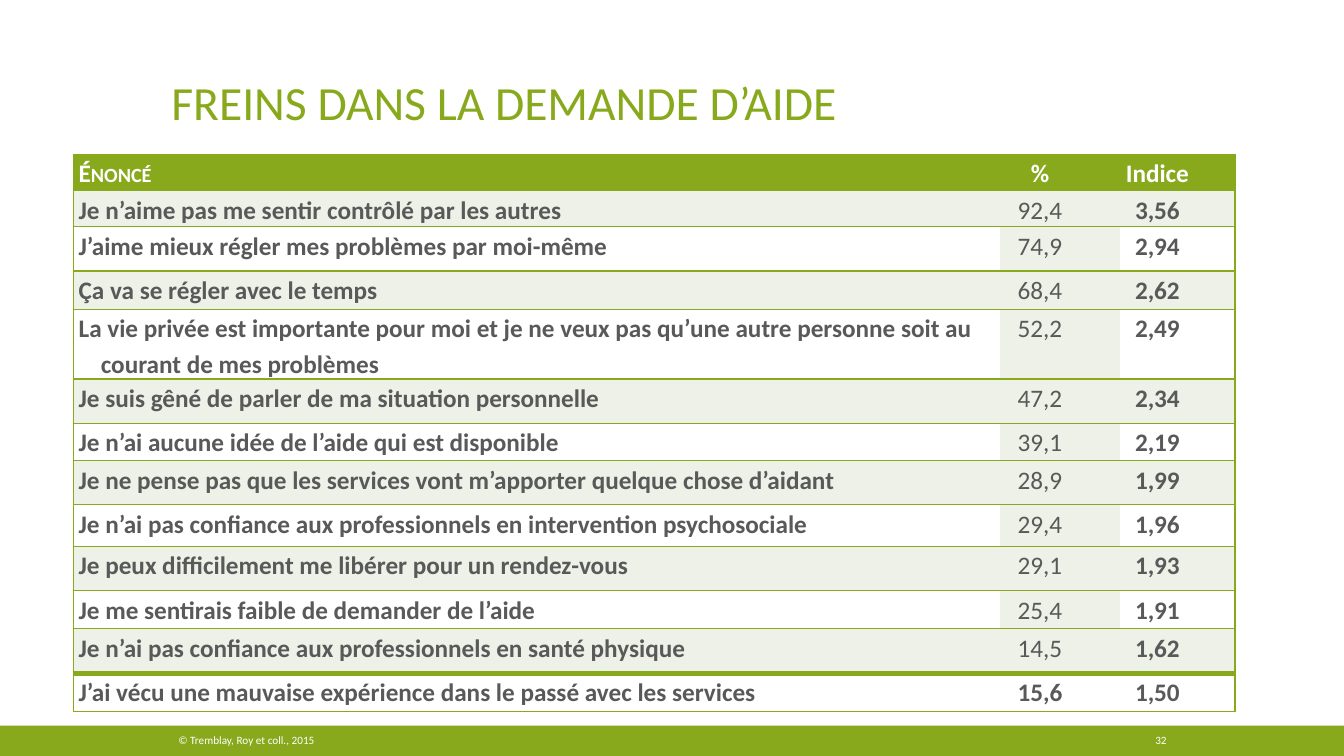
import pptx
import pptx.util
import pptx.dml.color
import pptx.enum.shapes
import pptx.enum.text
import pptx.oxml
import pptx.oxml.ns
from dataclasses import dataclass

HEADING = "FREINS DANS LA DEMANDE D’AIDE"
CREDIT = "© Tremblay, Roy et coll., 2015"
PAGE = "32"
BARRIERS = [
    ("Énoncé", "%", "Indice"),
    ("Je n’aime pas me sentir contrôlé par les autres", "92,4", "3,56"),
    ("J’aime mieux régler mes problèmes par moi-même", "74,9", "2,94"),
    ("Ça va se régler avec le temps", "68,4", "2,62"),
    ("La vie privée est importante pour moi et je ne veux pas qu’une autre personne soit "
     "au courant de mes problèmes", "52,2", "2,49"),
    ("Je suis gêné de parler de ma situation personnelle", "47,2", "2,34"),
    ("Je n’ai aucune idée de l’aide qui est disponible", "39,1", "2,19"),
    ("Je ne pense pas que les services vont m’apporter quelque chose d’aidant", "28,9", "1,99"),
    ("Je n’ai pas confiance aux professionnels en intervention psychosociale", "29,4", "1,96"),
    ("Je peux difficilement me libérer pour un rendez-vous", "29,1", "1,93"),
    ("Je me sentirais faible de demander de l’aide", "25,4", "1,91"),
    ("Je n’ai pas confiance aux professionnels en santé physique", "14,5", "1,62"),
    ("J’ai vécu une mauvaise expérience dans le passé avec les services", "15,6", "1,50"),
]
COLUMN_WIDTHS = [9.19, 1.19, 1.14]
ROW_HEIGHTS = [0.36, 0.36, 0.44, 0.38, 0.44, 0.44, 0.37, 0.44, 0.41, 0.44, 0.38, 0.44, 0.38]
LAST_ROW = len(BARRIERS) - 1
LAST_COLUMN = len(COLUMN_WIDTHS) - 1


@dataclass
class Theme:
    font: str = "Calibri"
    green: str = "87A91B"
    tint: str = "EDF1E8"
    white: str = "FFFFFF"
    ink: str = "595959"
    title_size: int = 34
    body_size: int = 18
    footer_size: int = 8
    rule: int = 1
    heavy_rule: int = 4


THEME = Theme()
ALIGN = pptx.enum.text.PP_ALIGN
ANCHOR = pptx.enum.text.MSO_ANCHOR
inches = pptx.util.Inches


def rgb(color):
    return pptx.dml.color.RGBColor.from_string(color)


def write(frame, text, size, color, bold=False, align=ALIGN.LEFT, spacing=1.0, hang=0, small_caps=False):
    paragraph = frame.paragraphs[0]
    paragraph.alignment = align
    paragraph.line_spacing = spacing
    run = paragraph.add_run()
    run.text = text
    run.font.name = THEME.font
    run.font.size = pptx.util.Pt(size)
    run.font.bold = bold
    run.font.color.rgb = rgb(color)
    if small_caps:
        run.font._element.set("cap", "small")
    if hang:
        properties = paragraph._p.get_or_add_pPr()
        properties.set("marL", str(inches(hang)))
        properties.set("indent", str(-inches(hang)))


def set_borders(cell, widths):
    properties = cell._tc.get_or_add_tcPr()
    for place, (side, width) in enumerate(widths.items()):
        edge = pptx.oxml.parse_xml(f'<a:ln{side} {pptx.oxml.ns.nsdecls("a")} w="{pptx.util.Pt(width)}"/>')
        if width:
            fill = pptx.oxml.parse_xml(
                f'<a:solidFill {pptx.oxml.ns.nsdecls("a")}><a:srgbClr val="{THEME.green}"/></a:solidFill>')
        else:
            fill = pptx.oxml.parse_xml(f'<a:noFill {pptx.oxml.ns.nsdecls("a")}/>')
        edge.append(fill)
        properties.insert(place, edge)


def cell_fill(row, column):
    if row == 0:
        return THEME.green
    if row % 2 or (column == 1 and row < LAST_ROW):
        return THEME.tint
    return THEME.white


def rule_above(row):
    return THEME.heavy_rule if row == LAST_ROW else THEME.rule


def add_title(slide):
    title = slide.shapes.title
    title.left, title.top, title.width, title.height = map(inches, (1.6, 0.1, 10, 1.25))
    title.text_frame.vertical_anchor = ANCHOR.BOTTOM
    write(title.text_frame, HEADING, THEME.title_size, THEME.green, spacing=0.9)


def add_footer(slide, width, height):
    band_height = height * 0.04
    band = slide.shapes.add_shape(pptx.enum.shapes.MSO_SHAPE.RECTANGLE, 0, inches(height - band_height),
                                  inches(width), inches(band_height))
    band.shadow.inherit = False
    band.fill.solid()
    band.fill.fore_color.rgb = rgb(THEME.green)
    band.line.fill.background()
    for text, left, span, align in ((CREDIT, 1.67, 7.1, ALIGN.LEFT), (PAGE, 10.82, 0.85, ALIGN.RIGHT)):
        frame = slide.shapes.add_textbox(inches(left), inches(7.22), inches(span), inches(0.25)).text_frame
        frame.word_wrap = True
        frame.vertical_anchor = ANCHOR.MIDDLE
        write(frame, text, THEME.footer_size, THEME.white, align=align)


def add_barriers(slide):
    table = slide.shapes.add_table(len(BARRIERS), len(COLUMN_WIDTHS), inches(0.73), inches(1.53),
                                   inches(sum(COLUMN_WIDTHS)), inches(sum(ROW_HEIGHTS))).table
    table.horz_banding = False
    for column, width in enumerate(COLUMN_WIDTHS):
        table.columns[column].width = inches(width)
    for row, (entries, height) in enumerate(zip(BARRIERS, ROW_HEIGHTS)):
        table.rows[row].height = inches(height)
        for column, entry in enumerate(entries):
            statement = column == 0
            header = row == 0
            cell = table.cell(row, column)
            cell.margin_left = inches(0.05 if statement else 0)
            cell.margin_right = inches(0.05 if statement else 0.4)
            cell.margin_top = cell.margin_bottom = 0
            cell.fill.solid()
            cell.fill.fore_color.rgb = rgb(cell_fill(row, column))
            set_borders(cell, {
                "L": THEME.rule if statement else 0,
                "R": THEME.rule if column == LAST_COLUMN else 0,
                "T": rule_above(row),
                "B": rule_above(row + 1),
            })
            write(cell.text_frame, entry, THEME.body_size, THEME.white if header else THEME.ink,
                  bold=column != 1 or row in (0, LAST_ROW),
                  align=ALIGN.LEFT if statement else ALIGN.CENTER, spacing=1.15,
                  hang=0.22 if statement and not header else 0, small_caps=statement and header)


def main():
    width, height = 13.33, 7.5
    deck = pptx.Presentation()
    deck.slide_width, deck.slide_height = inches(width), inches(height)
    slide = deck.slides.add_slide(deck.slide_layouts[5])
    add_footer(slide, width, height)
    add_title(slide)
    add_barriers(slide)
    deck.save("out.pptx")


if __name__ == "__main__":
    main()
